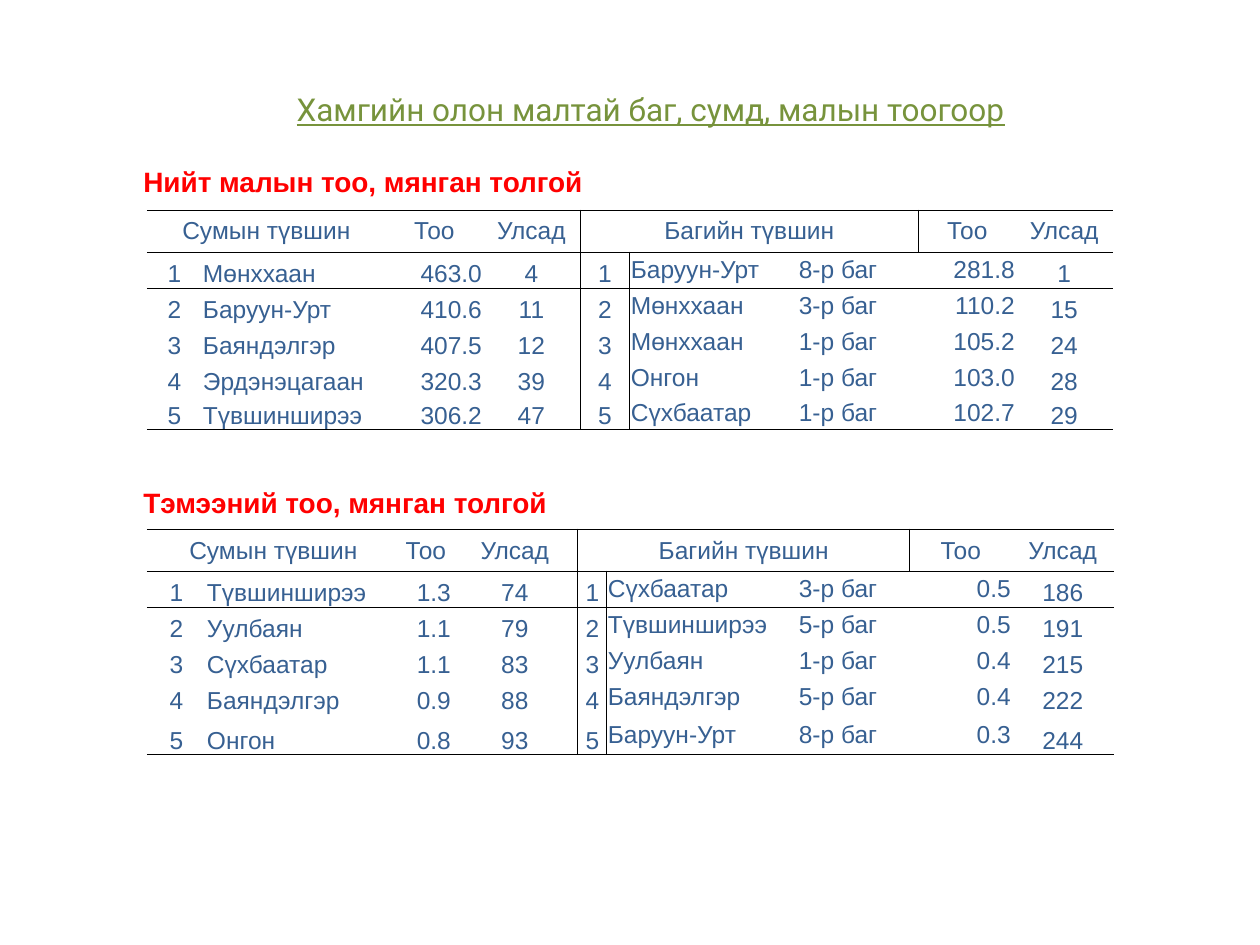
import pptx
import pptx.dml.color
import pptx.enum.text
import pptx.oxml
import pptx.oxml.ns
import pptx.util

PX = 914400 // 126
GREEN = pptx.dml.color.RGBColor(0x77, 0x93, 0x3C)
RED = pptx.dml.color.RGBColor(0xFF, 0x00, 0x00)
BLUE = pptx.dml.color.RGBColor(0x37, 0x60, 0x92)
NO_STYLE_NO_GRID = "{2D5ABB26-0587-4C30-8999-92F81FD0307C}"

ALIGN = pptx.enum.text.PP_ALIGN
ANCHOR = pptx.enum.text.MSO_ANCHOR


def write(frame, text, size=14, color=BLUE, font="Arial", align=ALIGN.LEFT,
          bold=False, underline=False):
    frame.text = text
    paragraph = frame.paragraphs[0]
    paragraph.alignment = align
    paragraph.font.size = pptx.util.Pt(size)
    paragraph.font.name = font
    paragraph.font.bold = bold
    paragraph.font.underline = underline
    paragraph.font.color.rgb = color


def add_borders(cell, sides):
    """Draw thin black lines on the given sides, listed in the order L, R, T, B."""
    for side in sides:
        cell._tc.get_or_add_tcPr().append(pptx.oxml.parse_xml(
            f'<a:ln{side} {pptx.oxml.ns.nsdecls("a")} w="6350"><a:solidFill>'
            f'<a:srgbClr val="000000"/></a:solidFill></a:ln{side}>'))


presentation = pptx.Presentation()
presentation.slide_width = pptx.util.Inches(10)
presentation.slide_height = pptx.util.Inches(7.5)
slide = presentation.slides.add_slide(presentation.slide_layouts[5])

title = slide.shapes.title
title.left, title.top, title.width, title.height = 284 * PX, 84 * PX, 735 * PX, 50 * PX
title.text_frame.word_wrap = True
title.text_frame.auto_size = pptx.enum.text.MSO_AUTO_SIZE.SHAPE_TO_FIT_TEXT
title.text_frame.vertical_anchor = ANCHOR.TOP
write(title.text_frame, "Хамгийн олон малтай баг, сумд, малын тоогоор",
      size=18, color=GREEN, font="Roboto", underline=True)

# Columns: rank, soum, count, national rank | rank, soum, bag, count, national rank
HEADER = ["Сумын түвшин", "", "Тоо", "Улсад", "Багийн түвшин", "", "", "Тоо", "Улсад"]
HEADER_SPANS = [(0, 1), (4, 6)]
COLUMN_ALIGN = [ALIGN.CENTER, ALIGN.LEFT, ALIGN.RIGHT, ALIGN.CENTER,
                ALIGN.CENTER, ALIGN.LEFT, ALIGN.LEFT, ALIGN.RIGHT, ALIGN.CENTER]
MIDDLE_COLUMNS = (5, 6, 7)
LAST_SOUM_COLUMN = 3

sections = [
    ("Нийт малын тоо, мянган толгой", 158, 210,
     [55, 184, 97, 97, 50, 168, 121, 97, 97], [42, 36, 36, 36, 36, 34],
     [("Мөнххаан", "463.0", "4", "Баруун-Урт", "8-р баг", "281.8", "1"),
      ("Баруун-Урт", "410.6", "11", "Мөнххаан", "3-р баг", "110.2", "15"),
      ("Баяндэлгэр", "407.5", "12", "Мөнххаан", "1-р баг", "105.2", "24"),
      ("Эрдэнэцагаан", "320.3", "39", "Онгон", "1-р баг", "103.0", "28"),
      ("Түвшинширээ", "306.2", "47", "Сүхбаатар", "1-р баг", "102.7", "29")]),
    ("Тэмээний тоо, мянган толгой", 479, 529,
     [59, 194, 52, 126, 29, 191, 112, 102, 102], [42, 36, 36, 36, 36, 40],
     [("Түвшинширээ", "1.3", "74", "Сүхбаатар", "3-р баг", "0.5", "186"),
      ("Уулбаян", "1.1", "79", "Түвшинширээ", "5-р баг", "0.5", "191"),
      ("Сүхбаатар", "1.1", "83", "Уулбаян", "1-р баг", "0.4", "215"),
      ("Баяндэлгэр", "0.9", "88", "Баяндэлгэр", "5-р баг", "0.4", "222"),
      ("Онгон", "0.8", "93", "Баруун-Урт", "8-р баг", "0.3", "244")]),
]

for heading, heading_top, table_top, widths, heights, records in sections:
    box = slide.shapes.add_textbox(131 * PX, heading_top * PX, 735 * PX, 47 * PX)
    box.text_frame.word_wrap = True
    box.text_frame.auto_size = pptx.enum.text.MSO_AUTO_SIZE.SHAPE_TO_FIT_TEXT
    write(box.text_frame, heading, size=16, color=RED, bold=True)

    table = slide.shapes.add_table(
        len(heights), len(widths), 147 * PX, table_top * PX,
        sum(widths) * PX, sum(heights) * PX).table
    table.first_row = table.horz_banding = False
    table._tbl.tblPr.find(pptx.oxml.ns.qn("a:tableStyleId")).text = NO_STYLE_NO_GRID
    for column, width in zip(table.columns, widths):
        column.width = width * PX
    for row, height in zip(table.rows, heights):
        row.height = height * PX

    rows = [HEADER]
    for rank, record in enumerate(records, 1):
        rows.append([str(rank), *record[:3], str(rank), *record[3:]])

    for r, values in enumerate(rows):
        for c, value in enumerate(values):
            cell = table.cell(r, c)
            cell.margin_left = cell.margin_right = cell.margin_top = PX
            cell.margin_bottom = 0
            is_middle = r == 0 or c in MIDDLE_COLUMNS
            cell.vertical_anchor = ANCHOR.MIDDLE if is_middle else ANCHOR.BOTTOM
            write(cell.text_frame, value, align=ALIGN.CENTER if r == 0 else COLUMN_ALIGN[c])
            sides = "L" if c == LAST_SOUM_COLUMN + 1 else ""
            sides += "R" if c == LAST_SOUM_COLUMN else ""
            sides += "T" if r in (0, 1) else ""
            sides += "B" if r in (0, len(rows) - 1) else ""
            add_borders(cell, sides)
            cell.fill.background()
    for first, last in HEADER_SPANS:
        table.cell(0, first).merge(table.cell(0, last))

presentation.save("out.pptx")
